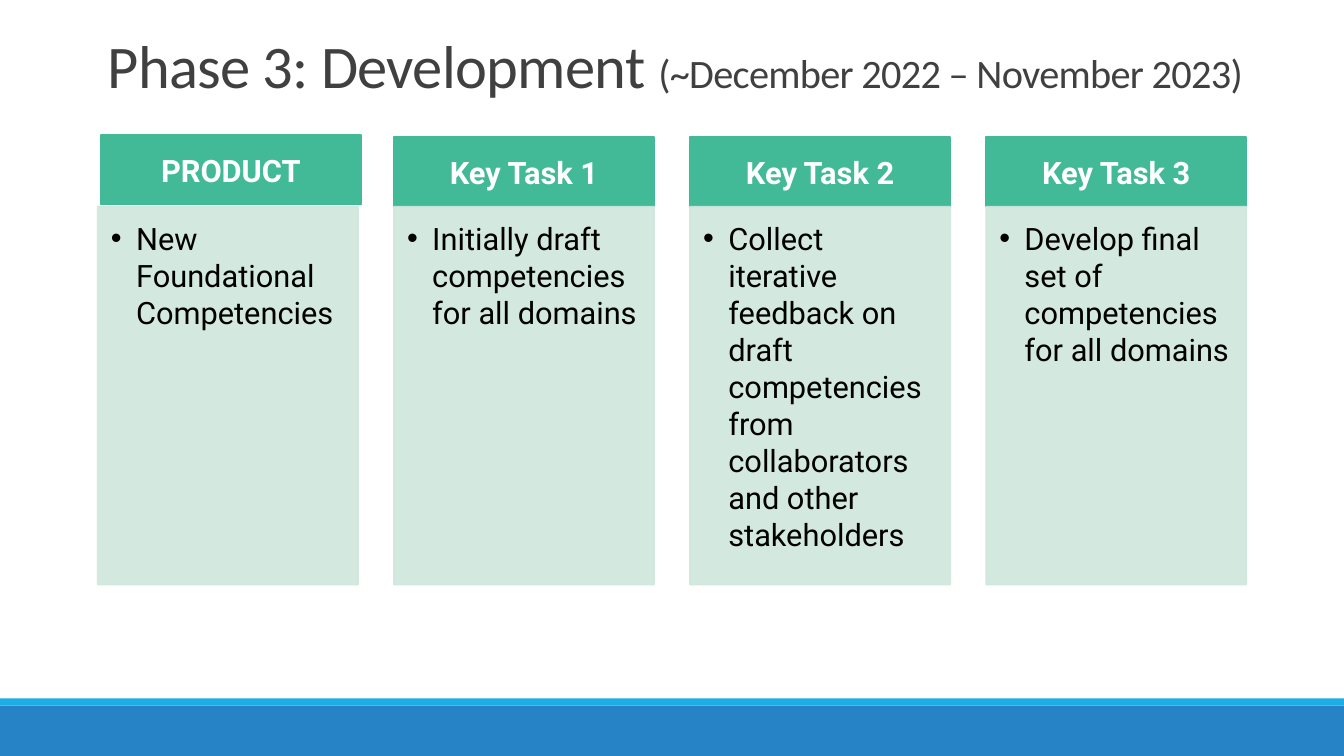
from lxml import etree
from pptx import Presentation
from pptx.dml.color import RGBColor
from pptx.enum.shapes import MSO_SHAPE as Shape
from pptx.enum.text import MSO_ANCHOR as Anchor, PP_ALIGN as Align
from pptx.oxml.ns import qn
from pptx.util import Inches, Pt

COLORS = {
    "bar": "2683C6", "stripe": "1CADE4", "title": "404040",
    "head": "42BA97", "body": "CFE7DD", "white": "FFFFFF", "black": "000000",
}
CARDS = [
    ("PRODUCT", "New Foundational Competencies"),
    ("Key Task 1", "Initially draft competencies for all domains"),
    ("Key Task 2", "Collect iterative feedback on draft competencies "
                   "from collaborators and other stakeholders"),
    ("Key Task 3", "Develop final set of competencies for all domains"),
]
LEFT, STEP, WIDTH = 0.97, 2.937, 2.58
HEAD_TOP, HEAD_HEIGHT = 1.36, 0.69
BODY_TOP, BODY_HEIGHT = 2.05, 3.75


def rgb(name):
    return RGBColor.from_string(COLORS[name])


def add_rect(slide, box, color, outlined=False):
    rect = slide.shapes.add_shape(Shape.RECTANGLE, *map(Inches, box))
    rect.shadow.inherit = False
    rect.fill.solid()
    rect.fill.fore_color.rgb = rgb(color)
    if outlined:
        rect.line.color.rgb = rgb(color)
        rect.line.width = Pt(1.25)
    else:
        rect.line.fill.background()
    return rect


def set_alpha(rect, percent):
    """Make the fill and the outline partly transparent."""
    for color in rect._element.spPr.iter(qn("a:srgbClr")):
        etree.SubElement(color, qn("a:alpha"), val=str(percent * 1000))


def set_font(run, font, size, color, bold=False):
    run.font.name = font
    run.font.size = Pt(size)
    run.font.color.rgb = rgb(color)
    run.font.bold = bold


def set_text(rect, text, color, anchor, align, insets, bold=False):
    frame = rect.text_frame
    frame.text = text
    frame.word_wrap = True
    frame.vertical_anchor = anchor
    (frame.margin_left, frame.margin_top,
     frame.margin_right, frame.margin_bottom) = map(Inches, insets)
    para = frame.paragraphs[0]
    para.alignment = align
    set_font(para.runs[0], "Roboto", 22, color, bold)
    return para


def add_bullet(para, indent):
    props = para._p.get_or_add_pPr()
    props.set("marL", str(Inches(indent)))
    props.set("indent", str(Inches(-indent)))
    etree.SubElement(props, qn("a:buFont"), typeface="Arial")
    etree.SubElement(props, qn("a:buChar"), char="•")


def add_title(slide, name, dates):
    box = slide.shapes.add_textbox(*map(Inches, (0.97, 0.37, 12.63, 0.68)))
    frame = box.text_frame
    frame.word_wrap = True
    frame.vertical_anchor = Anchor.BOTTOM
    para = frame.paragraphs[0]
    para.line_spacing = 0.85
    for text, size in ((name, 43.2), (dates, 28.8)):
        run = para.add_run()
        run.text = text
        set_font(run, "Calibri", size, "title")
        run.font._element.set("spc", "-50")


def add_card(slide, left, head, task, shift=(0, 0)):
    """Add a header over a bulleted panel; shift moves the header."""
    right, down = shift
    top = add_rect(slide, (left + right, HEAD_TOP + down, WIDTH, HEAD_HEIGHT),
                   "head", outlined=True)
    set_text(top, head, "white", Anchor.MIDDLE, Align.CENTER,
             (0.17, 0.1, 0.17, 0.1), bold=True)
    panel = add_rect(slide, (left, BODY_TOP, WIDTH, BODY_HEIGHT),
                     "body", outlined=True)
    set_alpha(panel, 90)
    para = set_text(panel, task, "black", Anchor.TOP, Align.LEFT,
                    (0.13, 0.13, 0.17, 0.19))
    add_bullet(para, 0.25)


def main():
    deck = Presentation()
    deck.slide_width, deck.slide_height = Inches(13.33), Inches(7.5)
    slide = deck.slides.add_slide(deck.slide_layouts[6])
    add_rect(slide, (0, 7, 13.33, 0.5), "bar")
    add_rect(slide, (0, 6.93, 13.33, 0.07), "stripe")
    add_title(slide, "Phase 3: Development ", "(~December 2022 – November 2023)")
    for i, (head, task) in enumerate(CARDS):
        shift = (0.03, -0.02) if i == 0 else (0, 0)
        add_card(slide, LEFT + i * STEP, head, task, shift)
    deck.save("out.pptx")


if __name__ == "__main__":
    main()
